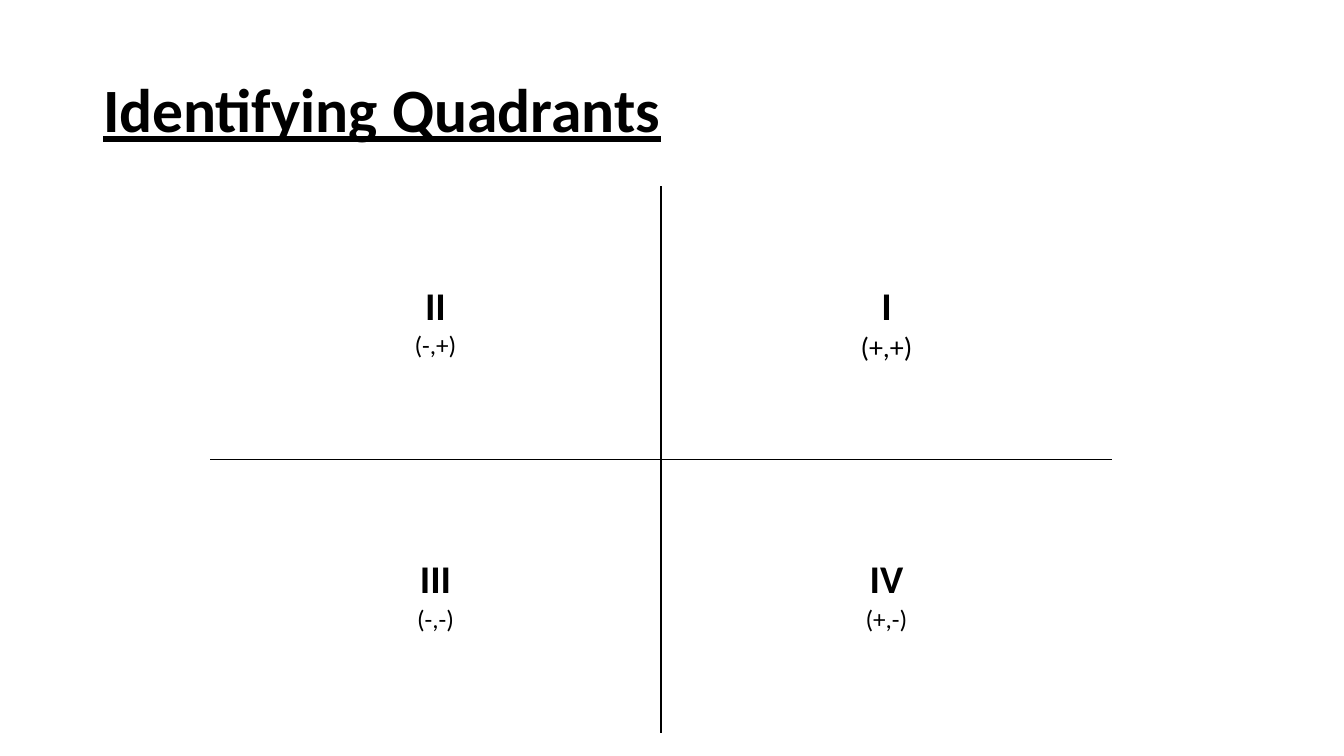
import pptx
import pptx.dml.color
import pptx.enum.text
import pptx.util
from lxml import etree
from pptx.oxml.ns import qn

PX = 914400 / 100.8
FONT = "Calibri"
BLACK = "000000"
WHITE = "FFFFFF"


def px(length):
    return pptx.util.Emu(round(length * PX))


def color(hex_code):
    return pptx.dml.color.RGBColor.from_string(hex_code)


presentation = pptx.Presentation()
presentation.slide_width = px(1344)
presentation.slide_height = px(756)
slide = presentation.slides.add_slide(presentation.slide_layouts[5])

heading = slide.shapes.title
heading.left, heading.top, heading.width, heading.height = px(93), px(40), px(1159), px(146)
heading.text_frame.text = "Identifying Quadrants"
heading.text_frame.vertical_anchor = pptx.enum.text.MSO_ANCHOR.MIDDLE
heading_line = heading.text_frame.paragraphs[0]
heading_line.alignment = pptx.enum.text.PP_ALIGN.LEFT
heading_line.line_spacing = 0.9
heading_font = heading_line.runs[0].font
heading_font.name = FONT
heading_font.size = pptx.util.Pt(44)
heading_font.bold = True
heading_font.underline = True
heading_font.color.rgb = color(BLACK)

# Each quadrant: numeral, signs, size of the signs in points
quadrants = [
    [("II", "(-,+)", 18), ("I", "(+,+)", 20)],
    [("III", "(-,-)", 18), ("IV", "(+,-)", 18)],
]
plane = slide.shapes.add_table(2, 2, px(210), px(186), px(902), px(547)).table
plane.first_row = False
plane.horz_banding = False
for column in plane.columns:
    column.width = px(451)
for row in plane.rows:
    row.height = px(273.5)

for row_index, quadrant_row in enumerate(quadrants):
    for column_index, (numeral, signs, signs_size) in enumerate(quadrant_row):
        quadrant = plane.cell(row_index, column_index)
        quadrant.margin_top = px(97)
        quadrant.text_frame.text = f"{numeral}\n{signs}"
        sizes = (28, signs_size)
        for line, size, bold in zip(quadrant.text_frame.paragraphs, sizes, (True, False)):
            line.alignment = pptx.enum.text.PP_ALIGN.CENTER
            font = line.runs[0].font
            font.name = FONT
            font.size = pptx.util.Pt(size)
            font.bold = bold
            font.color.rgb = color(BLACK)

        # Only the inner edges are drawn; together they form the axes
        axis_edges = ("RL"[column_index], "BT"[row_index])
        properties = quadrant._tc.get_or_add_tcPr()
        for edge in "LRTB":
            border = etree.SubElement(properties, qn(f"a:ln{edge}"), w="12700")
            if edge in axis_edges:
                stroke = etree.SubElement(border, qn("a:solidFill"))
                etree.SubElement(stroke, qn("a:srgbClr"), val=BLACK)
            else:
                etree.SubElement(border, qn("a:noFill"))
        quadrant.fill.solid()
        quadrant.fill.fore_color.rgb = color(WHITE)

presentation.save("out.pptx")
